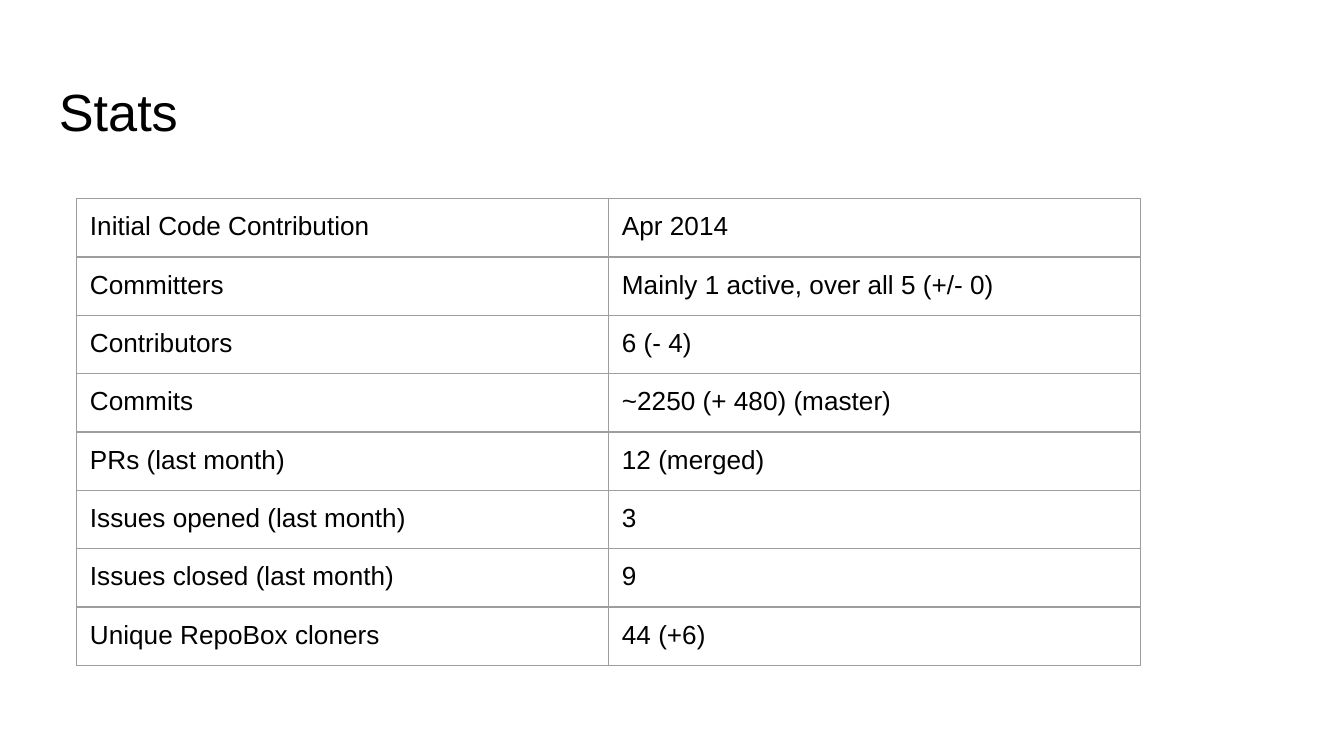
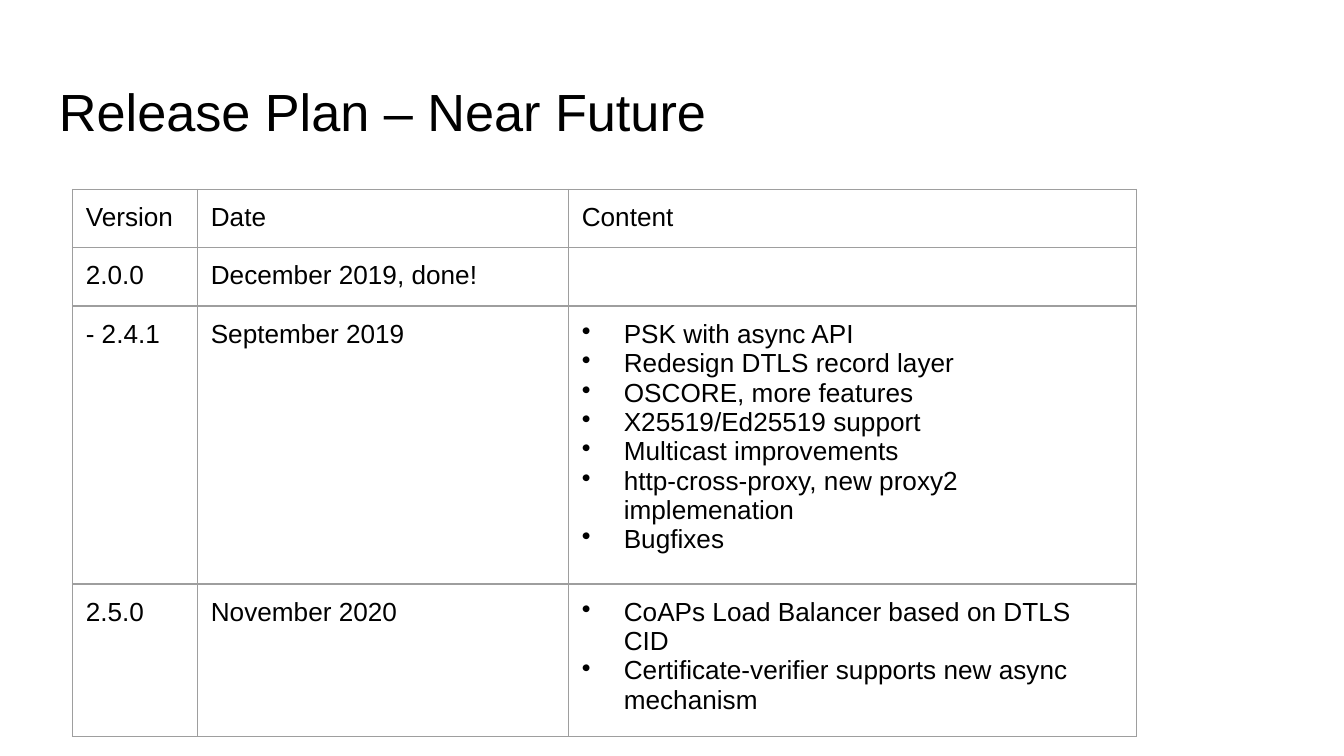
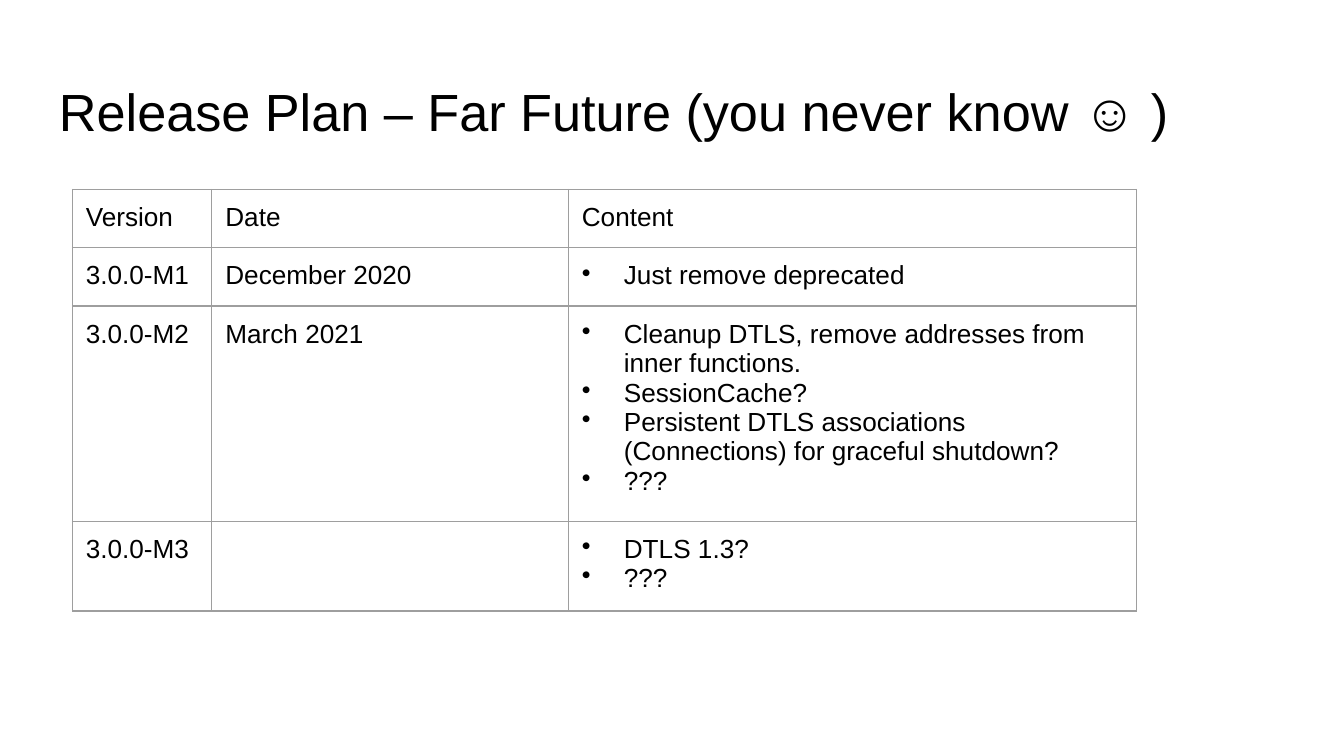
from lxml import etree
from pptx import Presentation
from pptx.dml.color import RGBColor
from pptx.enum.text import MSO_ANCHOR
from pptx.oxml.ns import qn
from pptx.util import Pt

TOP = MSO_ANCHOR.TOP
COLORS = {"text": "000000", "border": "9E9E9E"}
FONT = "Arial"
TITLE_SIZE, CELL_SIZE = 28, 14
INSET, ROW_HEIGHT, BORDER_WIDTH, BULLET_INDENT = 7.2, 30, 0.75, 22.5
TITLE_BOX = (24.5, 35.25, 671, 45)
TITLE_SPACE_BEFORE = 2.7
PLAN_HEADER = ("Version", "Date", "Content")

# A list inside a row is a bulleted cell.
SLIDES = [
    {
        "title": "Stats",
        "corner": (41, 106.5),
        "widths": (285, 285),
        "rows": [
            ("Initial Code Contribution", "Apr 2014"),
            ("Committers", "Mainly 1 active, over all 5 (+/- 0)"),
            ("Contributors", "6 (- 4)"),
            ("Commits", "~2250 (+ 480) (master)"),
            ("PRs (last month)", "12 (merged)"),
            ("Issues opened (last month)", "3"),
            ("Issues closed (last month)", "9"),
            ("Unique RepoBox cloners", "44 (+6)"),
        ],
    },
    {
        "title": "Release Plan – Near Future",
        "corner": (38.75, 101.5),
        "widths": (67, 198.75, 304.25),
        "rows": [
            PLAN_HEADER,
            ("2.0.0", "December 2019, done!", ""),
            ("- 2.4.1", "September 2019", [
                "PSK with async API",
                "Redesign DTLS record layer",
                "OSCORE, more features",
                "X25519/Ed25519 support",
                "Multicast improvements",
                "http-cross-proxy, new proxy2 implemenation",
                "Bugfixes",
            ]),
            ("2.5.0", "November 2020", [
                "CoAPs Load Balancer based on DTLS CID",
                "Certificate-verifier supports new async mechanism",
            ]),
        ],
    },
    {
        "title": "Release Plan – Far Future (you never know ☺ )",
        "corner": (38.75, 101.5),
        "widths": (74.75, 191, 304.25),
        "rows": [
            PLAN_HEADER,
            ("3.0.0-M1", "December 2020", ["Just remove deprecated"]),
            ("3.0.0-M2", "March 2021", [
                "Cleanup DTLS, remove addresses from inner functions.",
                "SessionCache?",
                "Persistent DTLS associations (Connections) for graceful shutdown?",
                "???",
            ]),
            ("3.0.0-M3", "", ["DTLS 1.3?", "???"]),
        ],
    },
]


def set_insets(target):
    for side in ("left", "top", "right", "bottom"):
        setattr(target, f"margin_{side}", Pt(INSET))


def write(para, text, size):
    span = para.add_run()
    span.text = text
    for name, value in {"name": FONT, "size": Pt(size), "bold": False}.items():
        setattr(span.font, name, value)
    span.font.color.rgb = RGBColor.from_string(COLORS["text"])


def add_bullet(para):
    props = para._p.get_or_add_pPr()
    props.set("marL", str(Pt(BULLET_INDENT)))
    props.set("indent", str(-Pt(BULLET_INDENT)))
    etree.SubElement(props, qn("a:buChar"), char="•")


def add_borders(cell):
    props = cell._tc.get_or_add_tcPr()
    for side in "LRTB":
        line = etree.SubElement(props, qn(f"a:ln{side}"), w=str(Pt(BORDER_WIDTH)))
        fill = etree.SubElement(line, qn("a:solidFill"))
        etree.SubElement(fill, qn("a:srgbClr"), val=COLORS["border"])


def fill_cell(cell, content):
    set_insets(cell)
    cell.vertical_anchor = TOP
    add_borders(cell)
    cell.fill.background()
    frame = cell.text_frame
    bulleted = isinstance(content, list)
    for index, text in enumerate(content if bulleted else [content]):
        para = frame.add_paragraph() if index else frame.paragraphs[0]
        if bulleted:
            add_bullet(para)
        if text:
            write(para, text, CELL_SIZE)
        else:  # keeps an empty cell from stretching its row
            etree.SubElement(para._p, qn("a:endParaRPr"), sz=str(CELL_SIZE * 100))


def add_title(page, text):
    box = page.shapes.add_textbox(*map(Pt, TITLE_BOX))
    frame = box.text_frame
    frame.word_wrap = True
    frame.vertical_anchor = TOP
    set_insets(frame)
    para = frame.paragraphs[0]
    para.space_before = Pt(TITLE_SPACE_BEFORE)
    write(para, text, TITLE_SIZE)


def add_grid(page, corner, widths, rows):
    size = (sum(widths), ROW_HEIGHT * len(rows))
    table = page.shapes.add_table(len(rows), len(widths), *map(Pt, corner + size)).table
    table.first_row = table.horz_banding = False
    for column, width in zip(table.columns, widths):
        column.width = Pt(width)
    for row, contents in zip(table.rows, rows):
        row.height = Pt(ROW_HEIGHT)
        for cell, content in zip(row.cells, contents):
            fill_cell(cell, content)


def main():
    deck = Presentation()
    deck.slide_width, deck.slide_height = Pt(720), Pt(405)
    blank = deck.slide_layouts[6]
    for item in SLIDES:
        page = deck.slides.add_slide(blank)
        add_title(page, item["title"])
        add_grid(page, item["corner"], item["widths"], item["rows"])
    deck.save("out.pptx")


if __name__ == "__main__":
    main()
